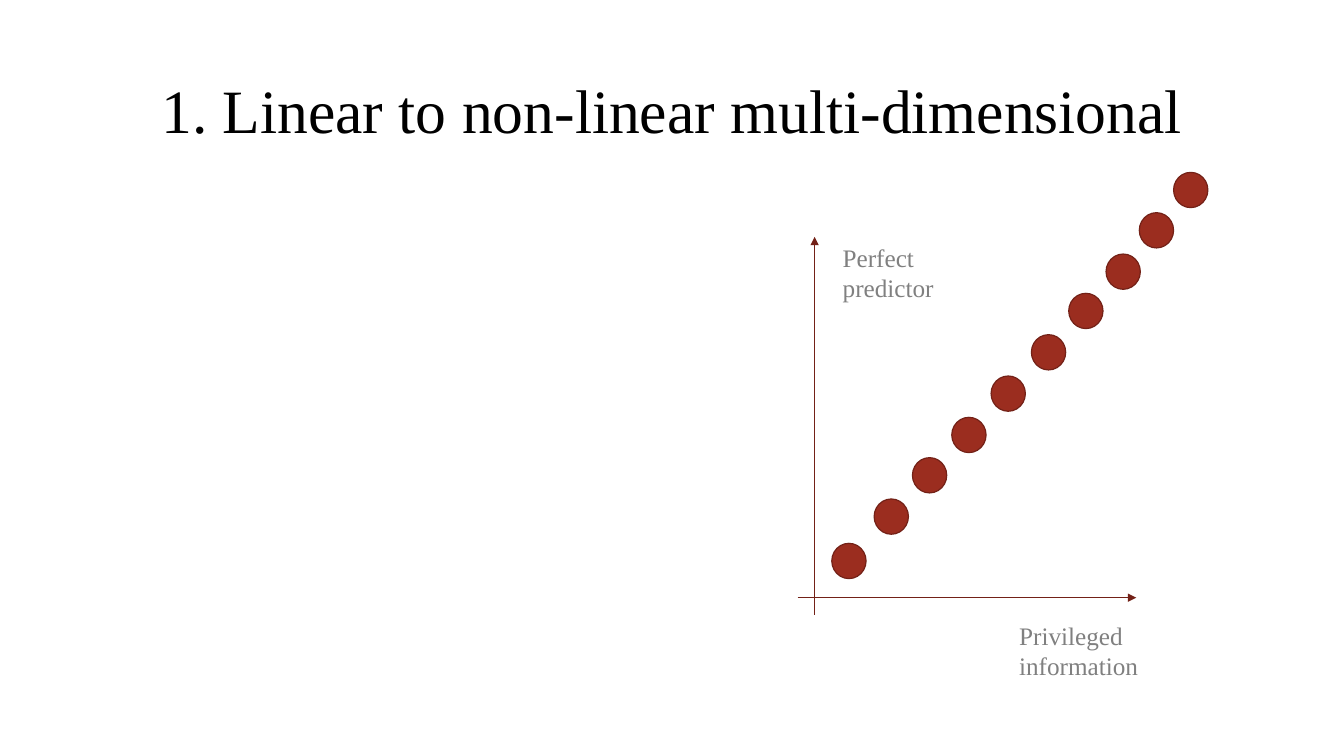
from lxml import etree
from pptx import Presentation
from pptx.dml.color import RGBColor
from pptx.enum.shapes import MSO_CONNECTOR, MSO_SHAPE
from pptx.enum.text import MSO_ANCHOR, PP_ALIGN
from pptx.oxml.ns import qn
from pptx.util import Inches, Pt

OVAL = MSO_SHAPE.OVAL
STRAIGHT = MSO_CONNECTOR.STRAIGHT
TOP, MIDDLE = MSO_ANCHOR.TOP, MSO_ANCHOR.MIDDLE
LEFT, CENTER = PP_ALIGN.LEFT, PP_ALIGN.CENTER

FONT = "Times New Roman"
BLACK, GRAY, RED, DARK_RED = "000000", "808080", "9B2D1F", "732117"
SLIDE_SIZE = (13.33, 7.5)
LINE_WIDTH = 0.85

TITLE = "1. Linear to non-linear multi-dimensional"
TITLE_BOX = (0.92, 0.4, 11.5, 1.45)
AXIS_LABELS = [
    ("Perfect \vpredictor", (8.26, 2.35, 1.8, 0.71)),
    ("Privileged information", (10.01, 6.1, 1.48, 0.71)),
]

# Axes cross at the origin and run a little past it
ORIGIN = (8.08, 5.93)
OVERHANG = 0.17
AXIS_RIGHT, AXIS_TOP = 11.27, 2.35

# Left and top of each data point, from the origin outwards
DOT_SIZE = (0.34, 0.35)
DOTS = [
    (8.25, 5.39), (8.67, 4.95), (9.05, 4.54), (9.44, 4.14), (9.83, 3.73),
    (10.23, 3.32), (10.6, 2.91), (10.97, 2.52), (11.3, 2.11), (11.64, 1.71),
]


def color(hex_string):
    return RGBColor.from_string(hex_string)


def inches(values):
    return [Inches(value) for value in values]


def style_line(line):
    line.color.rgb = color(DARK_RED)
    line.width = Pt(LINE_WIDTH)


def add_text(slide, text, box, size, hex_string, align=LEFT, anchor=TOP, spacing=1.0):
    text_frame = slide.shapes.add_textbox(*inches(box)).text_frame
    text_frame.word_wrap = True
    text_frame.vertical_anchor = anchor
    text_frame.text = text
    paragraph = text_frame.paragraphs[0]
    paragraph.alignment = align
    paragraph.line_spacing = spacing
    for run in paragraph.runs:
        run.font.name = FONT
        run.font.size = Pt(size)
        run.font.color.rgb = color(hex_string)


def add_axis(slide, start, end):
    axis = slide.shapes.add_connector(STRAIGHT, *inches(start + end))
    style_line(axis.line)
    etree.SubElement(axis.line._get_or_add_ln(), qn("a:tailEnd"), type="triangle")
    etree.SubElement(axis._element.spPr, qn("a:effectLst"))


def add_dot(slide, position):
    dot = slide.shapes.add_shape(OVAL, *inches(position + DOT_SIZE))
    dot.shadow.inherit = False
    dot.fill.solid()
    dot.fill.fore_color.rgb = color(RED)
    style_line(dot.line)


def main():
    presentation = Presentation()
    presentation.slide_width, presentation.slide_height = inches(SLIDE_SIZE)
    slide = presentation.slides.add_slide(presentation.slide_layouts[6])

    add_text(slide, TITLE, TITLE_BOX, 44, BLACK, CENTER, MIDDLE, 0.9)
    origin_x, origin_y = ORIGIN
    add_axis(slide, (origin_x - OVERHANG, origin_y), (AXIS_RIGHT, origin_y))
    add_axis(slide, (origin_x, origin_y + OVERHANG), (origin_x, AXIS_TOP))
    for text, box in AXIS_LABELS:
        add_text(slide, text, box, 18, GRAY)
    for position in DOTS:
        add_dot(slide, position)

    presentation.save("out.pptx")


if __name__ == "__main__":
    main()
